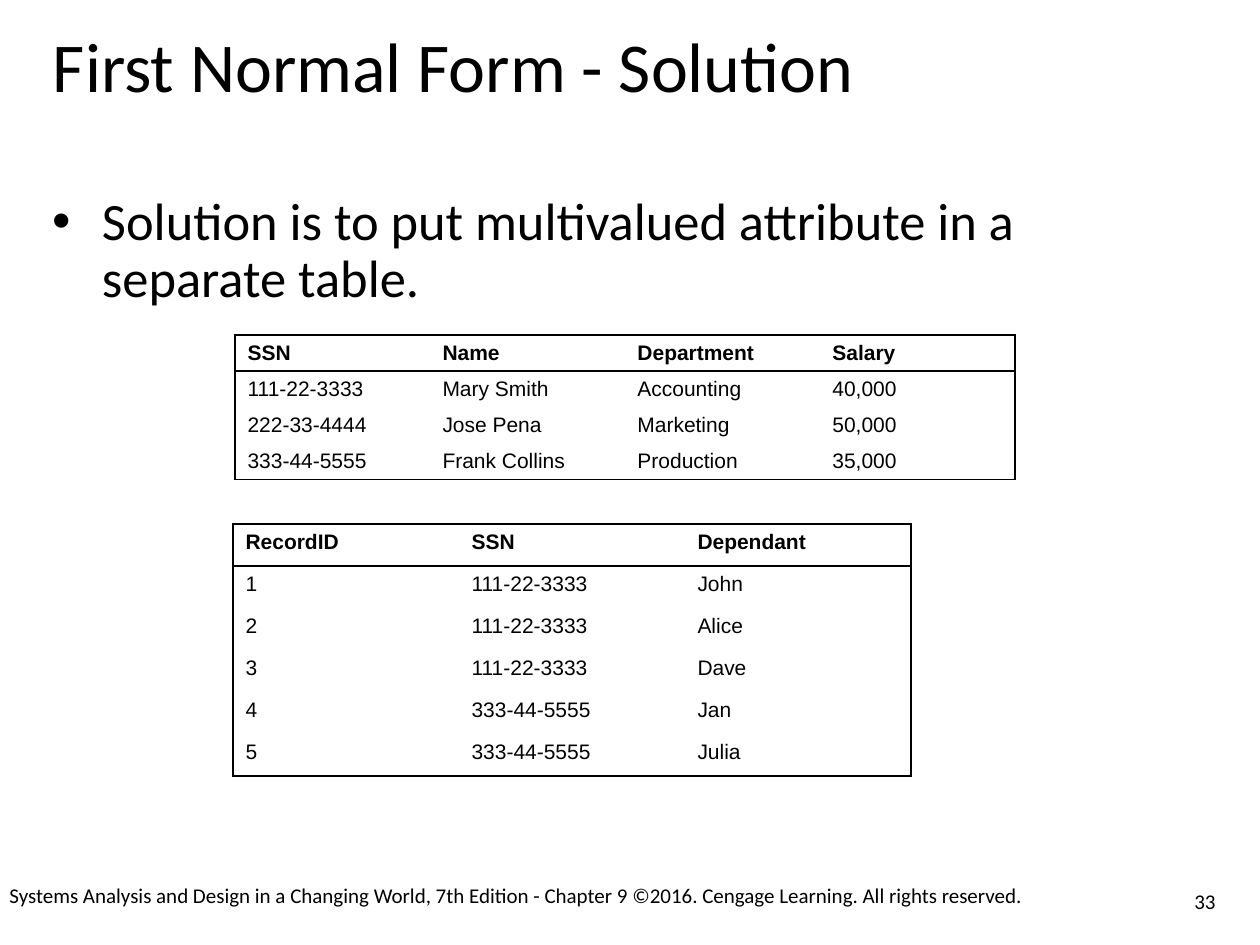
from lxml import etree
from pptx import Presentation
from pptx.dml.color import RGBColor
from pptx.enum.text import MSO_ANCHOR, MSO_AUTO_SIZE, PP_ALIGN
from pptx.oxml import parse_xml
from pptx.oxml.ns import nsdecls, qn
from pptx.util import Emu, Pt

BLACK = "000000"


def px(n):
    """Convert pixels, 126 to the inch, to EMU."""
    return Emu(round(n * 914400 / 126))


def style(p, size, name="Calibri", bold=False):
    for r in p.runs:
        r.font.size = Pt(size)
        r.font.name = name
        r.font.bold = bold
        r.font.color.rgb = RGBColor.from_string(BLACK)


prs = Presentation()
prs.slide_width, prs.slide_height = px(1260), px(945)
s = prs.slides.add_slide(prs.slide_layouts[1])

# Title and bullet
title, body = s.shapes.title, s.placeholders[1]
for sp, text, top, height, size in [
    (title, "First Normal Form - Solution", 32, 77, 40),
    (body, "Solution is to put multivalued attribute in a separate table.", 195, 115, 30),
]:
    sp.left, sp.top, sp.width, sp.height = px(53), px(top), px(1155), px(height)
    tf = sp.text_frame
    tf.text = text
    tf.margin_left = tf.margin_right = tf.margin_top = tf.margin_bottom = 0
    tf.vertical_anchor = MSO_ANCHOR.TOP
    tf.auto_size = MSO_AUTO_SIZE.NONE
    p = tf.paragraphs[0]
    p.alignment = PP_ALIGN.LEFT
    p.line_spacing = 0.9
    p.space_before = Pt(0)
    style(p, size)

pPr = body.text_frame.paragraphs[0]._p.get_or_add_pPr()
pPr.set("marL", str(px(49)))
pPr.set("indent", str(-px(49)))
etree.SubElement(pPr, qn("a:buFont")).set("typeface", "Arial")
etree.SubElement(pPr, qn("a:buChar")).set("char", "•")

# Tables: a frame around the whole and a rule under the header
employees = [
    ["SSN", "Name", "Department", "Salary"],
    ["111-22-3333", "Mary Smith", "Accounting", "40,000"],
    ["222-33-4444", "Jose Pena", "Marketing", "50,000"],
    ["333-44-5555", "Frank Collins", "Production", "35,000"],
]
dependants = [
    ["RecordID", "SSN", "Dependant"],
    ["1", "111-22-3333", "John"],
    ["2", "111-22-3333", "Alice"],
    ["3", "111-22-3333", "Dave"],
    ["4", "333-44-5555", "Jan"],
    ["5", "333-44-5555", "Julia"],
]
for rows, left, top, col_width, row_height in [
    (employees, 235, 335, 195, 36),
    (dependants, 233, 524, 226, 42),
]:
    n_rows, n_cols = len(rows), len(rows[0])
    table = s.shapes.add_table(n_rows, n_cols, px(left), px(top),
                               px(col_width * n_cols), px(row_height * n_rows)).table
    table.first_row = table.horz_banding = False
    for i, row in enumerate(rows):
        table.rows[i].height = px(row_height)
        for j, text in enumerate(row):
            cell = table.cell(i, j)
            cell.text = text
            style(cell.text_frame.paragraphs[0], 12, "Arial", bold=i == 0)
            edges = {"L": j == 0, "R": j == n_cols - 1,
                     "T": i <= 1, "B": i in (0, n_rows - 1)}
            tcPr = cell._tc.get_or_add_tcPr()
            for side, ruled in edges.items():
                paint = (f'<a:solidFill><a:srgbClr val="{BLACK}"/></a:solidFill>'
                         if ruled else "<a:noFill/>")
                tcPr.append(parse_xml(
                    f'<a:ln{side} {nsdecls("a")} w="{Pt(1)}">{paint}</a:ln{side}>'))
            cell.fill.background()
    for col in table.columns:
        col.width = px(col_width)

# Footer and page number
for text, left, width, align, anchor in [
    ("33", 1144, 84, PP_ALIGN.RIGHT, MSO_ANCHOR.MIDDLE),
    ("Systems Analysis and Design in a Changing World, 7th Edition - Chapter 9 "
     "©2016. Cengage Learning. All rights reserved.",
     -3, 1115, PP_ALIGN.LEFT, MSO_ANCHOR.TOP),
]:
    tf = s.shapes.add_textbox(px(left), px(876), px(width), px(50)).text_frame
    tf.word_wrap = True
    tf.vertical_anchor = anchor
    tf.text = text
    tf.paragraphs[0].alignment = align
    style(tf.paragraphs[0], 12)

prs.save("out.pptx")
